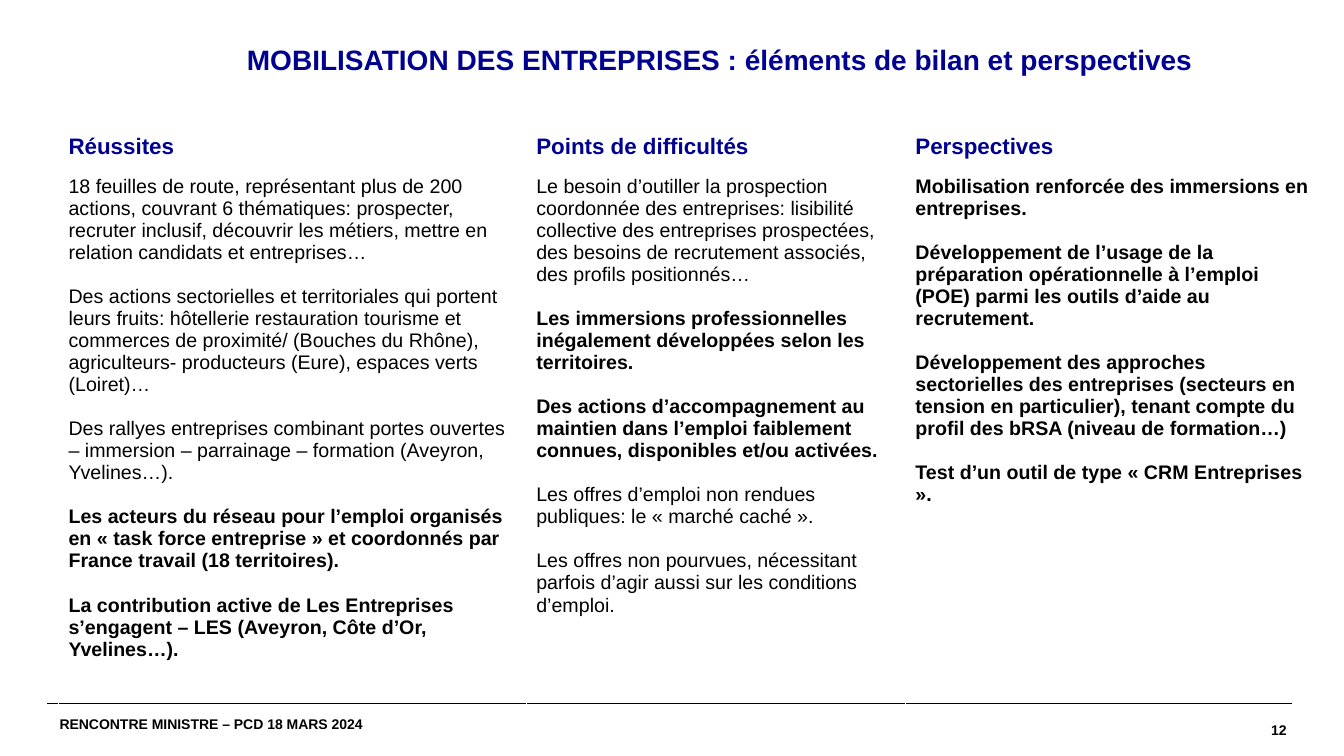
from dataclasses import dataclass
from lxml.etree import SubElement
from pptx import Presentation
from pptx.dml.color import RGBColor
from pptx.enum.shapes import MSO_CONNECTOR
from pptx.enum.text import MSO_ANCHOR, PP_ALIGN
from pptx.oxml.ns import qn
from pptx.util import Inches, Pt


@dataclass(frozen=True)
class Theme:
    font: str = "Arial"
    blue: RGBColor = RGBColor(0x00, 0x00, 0x91)
    black: RGBColor = RGBColor(0x00, 0x00, 0x00)
    border: str = "FFFFFF"
    title: int = 20
    heading: int = 16
    body: int = 14
    footer: int = 10
    gap: float = 15.8
    rule: float = 0.8


THEME = Theme()
WIDTH, HEIGHT = Inches(13.33), Inches(7.5)

TITLE_BOX = (17.63, 5.47, 80.87, 11.6)
TABLE_BOX = (4.35, 17.07, 94.22, 76.27)
FOOTER_BOX = (3.45, 93.07, 92.28, 6.93)
COLUMN_SHARES = (36.94, 29.94, 33.12)
ROW_SHARES = (7.17, 92.83)

TITLE = "MOBILISATION DES ENTREPRISES : éléments de bilan et perspectives"
FOOTER = "RENCONTRE MINISTRE – PCD 18 MARS 2024"
PAGE = "12"

COLUMNS = [
    ("Réussites", [
        ("18 feuilles de route, représentant plus de 200 actions, couvrant 6 thématiques: prospecter, "
         "recruter inclusif, découvrir les métiers, mettre en relation candidats et entreprises…", False),
        ("Des actions sectorielles et territoriales qui portent leurs fruits: hôtellerie restauration "
         "tourisme et commerces de proximité/ (Bouches du Rhône), agriculteurs- producteurs (Eure), "
         "espaces verts (Loiret)…", False),
        ("Des rallyes entreprises combinant portes ouvertes – immersion – parrainage – formation "
         "(Aveyron, Yvelines…).", False),
        ("Les acteurs du réseau pour l’emploi organisés en « task force entreprise » et coordonnés "
         "par France travail (18 territoires).", True),
        ("La contribution active de Les Entreprises s’engagent – LES (Aveyron, Côte d’Or, "
         "Yvelines…).", True),
    ]),
    ("Points de difficultés", [
        ("Le besoin d’outiller la prospection coordonnée des entreprises: lisibilité collective des "
         "entreprises prospectées, des besoins de recrutement associés, des profils positionnés…", False),
        ("Les immersions professionnelles inégalement développées selon les territoires.", True),
        ("Des actions d’accompagnement au maintien dans l’emploi faiblement connues, disponibles "
         "et/ou activées.", True),
        ("Les offres d’emploi non rendues publiques: le « marché caché ».", False),
        ("Les offres non pourvues, nécessitant parfois d’agir aussi sur les conditions d’emploi.", False),
    ]),
    ("Perspectives", [
        ("Mobilisation renforcée des immersions en entreprises.", True),
        ("Développement de l’usage de la préparation opérationnelle à l’emploi (POE) parmi les outils "
         "d’aide au recrutement.", True),
        ("Développement des approches sectorielles des entreprises (secteurs en tension en "
         "particulier), tenant compte du profil des bRSA (niveau de formation…)", True),
        ("Test d’un outil de type « CRM Entreprises ».", True),
    ]),
]


def across(share):
    return round(WIDTH * share / 100)


def down(share):
    return round(HEIGHT * share / 100)


def place(box):
    left, top, width, height = box
    return across(left), down(top), across(width), down(height)


def apply(target, values):
    for name, value in values.items():
        setattr(target, name, value)


def write(paragraph, text, size, color=THEME.black, bold=True, **layout):
    run = paragraph.add_run()
    run.text = text
    apply(run.font, {"name": THEME.font, "size": Pt(size), "bold": bold})
    run.font.color.rgb = color
    apply(paragraph, layout)


def add_text_box(slide, box, frame_format):
    frame = slide.shapes.add_textbox(*place(box)).text_frame
    apply(frame, {"word_wrap": True, **frame_format})
    return frame.paragraphs[0]


def set_borders(cell, bottom):
    properties = cell._tc.get_or_add_tcPr()
    for side, points in {"L": 1, "R": 1, "T": 1, "B": bottom}.items():
        line = SubElement(properties, qn(f"a:ln{side}"), w=str(Pt(points)))
        fill = SubElement(line, qn("a:solidFill"))
        SubElement(fill, qn("a:srgbClr"), val=THEME.border)
    cell.fill.background()


def add_title(slide, box):
    paragraph = add_text_box(slide, box, {"vertical_anchor": MSO_ANCHOR.TOP})
    write(paragraph, TITLE, THEME.title, THEME.blue, line_spacing=0.9, space_after=Pt(6.7))


def add_review_table(slide, box):
    left, top, width, height = place(box)
    table = slide.shapes.add_table(2, len(COLUMNS), left, top, width, height).table
    apply(table, {"first_row": False, "horz_banding": False})
    for column, share in zip(table.columns, COLUMN_SHARES):
        column.width = round(width * share / 100)
    for row, share in zip(table.rows, ROW_SHARES):
        row.height = round(height * share / 100)
    for index, (heading, points) in enumerate(COLUMNS):
        heading_cell, body_cell = table.cell(0, index), table.cell(1, index)
        set_borders(heading_cell, 3)
        set_borders(body_cell, 1)
        write(heading_cell.text_frame.paragraphs[0], heading, THEME.heading, THEME.blue)
        frame = body_cell.text_frame
        for number, (text, bold) in enumerate(points):
            paragraph = frame.add_paragraph() if number else frame.paragraphs[0]
            write(paragraph, text, THEME.body, bold=bold, space_before=Pt(THEME.gap if number else 0))


def add_footer(slide, box):
    left, top, width, height = box
    for start in (left + 0.08, left + 0.45):
        rule = slide.shapes.add_connector(
            MSO_CONNECTOR.STRAIGHT, across(start), down(top), across(start + 92.2), down(top))
        rule.line.color.rgb = THEME.black
        rule.line.width = Pt(THEME.rule)
        SubElement(rule._element.spPr, qn("a:effectLst"))
    sides = ("margin_left", "margin_right")
    ends = ("margin_top", "margin_bottom")
    middle = {"vertical_anchor": MSO_ANCHOR.MIDDLE}
    page_width = 14.78
    page = add_text_box(slide, (left + width - page_width, top, page_width, height),
                        {**middle, **dict.fromkeys(sides + ends, 0)})
    write(page, PAGE, THEME.footer, alignment=PP_ALIGN.RIGHT)
    label = add_text_box(slide, (left, top, 25.88, 5.33),
                         {**middle, **dict.fromkeys(sides, across(0.98)), **dict.fromkeys(ends, down(0.93))})
    write(label, FOOTER, THEME.footer)


def main():
    presentation = Presentation()
    apply(presentation, {"slide_width": WIDTH, "slide_height": HEIGHT})
    slide = presentation.slides.add_slide(presentation.slide_layouts[6])
    add_footer(slide, FOOTER_BOX)
    add_review_table(slide, TABLE_BOX)
    add_title(slide, TITLE_BOX)
    presentation.save("out.pptx")


if __name__ == "__main__":
    main()
